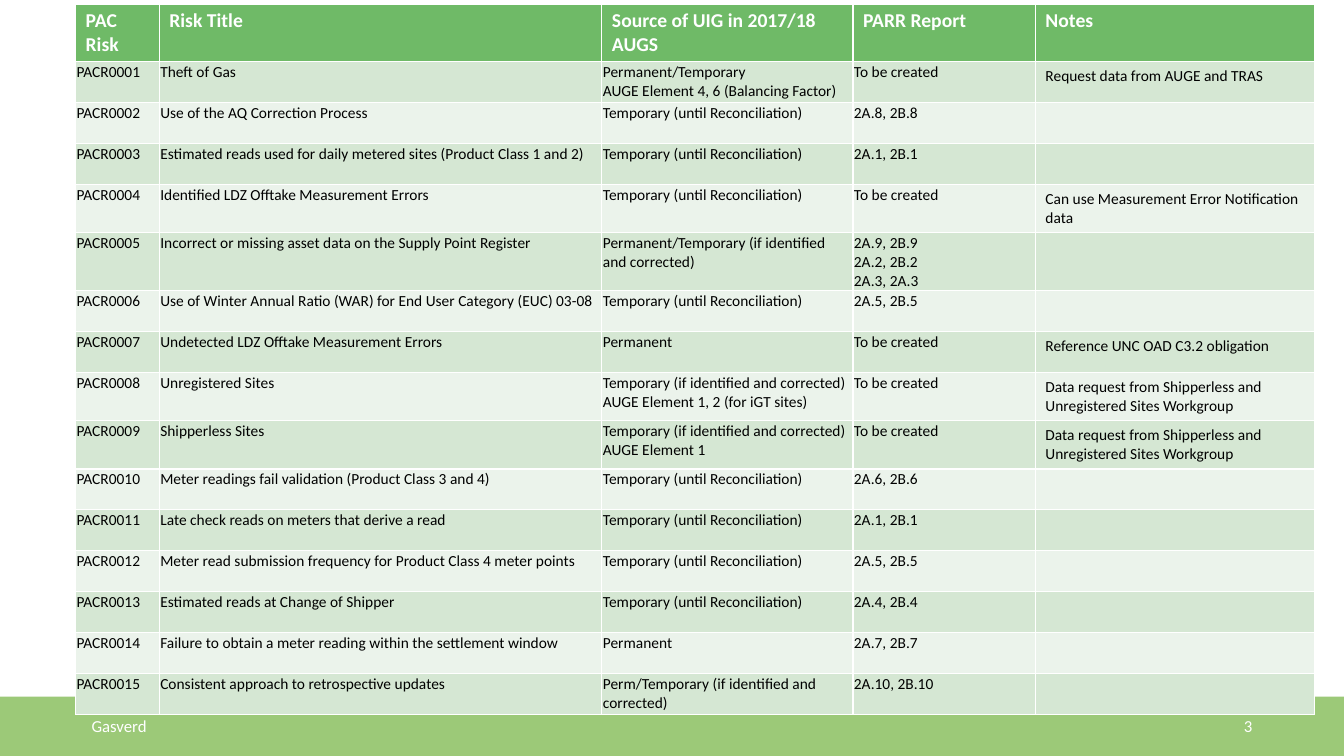
"""Build the slide that lists the PAC risks and their reports."""
from pptx import Presentation
from pptx.dml.color import RGBColor
from pptx.enum.shapes import MSO_SHAPE as Shape
from pptx.enum.text import MSO_ANCHOR as Anchor, PP_ALIGN as Align
from pptx.util import Inches, Pt

COLORS = {"band": "9CC978", "header": "6FBA67", "odd": "D5E7D3",
          "even": "EBF3EB", "white": "FFFFFF", "black": "000000"}
FONT = "Calibri"
SLIDE_WIDTH, SLIDE_HEIGHT = 13.33, 7.5
COLUMN_WIDTHS = (0.83, 4.39, 2.49, 1.81, 2.77)
HEADINGS = ("PAC Risk", "Risk Title", "Source of UIG in 2017/18 AUGS",
            "PARR Report", "Notes")
TEMPORARY = "Temporary (until Reconciliation)"
CORRECTED = "Temporary (if identified and corrected)"
PENDING = "To be created"
WORKGROUP = "Data request from Shipperless and Unregistered Sites Workgroup"
RISKS = (
    ("Theft of Gas",
     "Permanent/Temporary\nAUGE Element 4, 6 (Balancing Factor)",
     PENDING, "Request data from AUGE and TRAS"),
    ("Use of the AQ Correction Process", TEMPORARY, "2A.8, 2B.8", ""),
    ("Estimated reads used for daily metered sites (Product Class 1 and 2)",
     TEMPORARY, "2A.1, 2B.1", ""),
    ("Identified LDZ Offtake Measurement Errors", TEMPORARY, PENDING,
     "Can use Measurement Error Notification data"),
    ("Incorrect or missing asset data on the Supply Point Register",
     "Permanent/Temporary (if identified and corrected)",
     "2A.9, 2B.9\v2A.2, 2B.2\v2A.3, 2A.3", ""),
    ("Use of Winter Annual Ratio (WAR) for End User Category (EUC) 03-08",
     TEMPORARY, "2A.5, 2B.5", ""),
    ("Undetected LDZ Offtake Measurement Errors", "Permanent", PENDING,
     "Reference UNC OAD C3.2 obligation"),
    ("Unregistered Sites",
     f"{CORRECTED}\nAUGE Element 1, 2 (for iGT sites)", PENDING, WORKGROUP),
    ("Shipperless Sites", f"{CORRECTED}\nAUGE Element 1", PENDING, WORKGROUP),
    ("Meter readings fail validation (Product Class 3 and 4)",
     TEMPORARY, "2A.6, 2B.6", ""),
    ("Late check reads on meters that derive a read",
     TEMPORARY, "2A.1, 2B.1", ""),
    ("Meter read submission frequency for Product Class 4 meter points",
     TEMPORARY, "2A.5, 2B.5", ""),
    ("Estimated reads at Change of Shipper", TEMPORARY, "2A.4, 2B.4", ""),
    ("Failure to obtain a meter reading within the settlement window",
     "Permanent", "2A.7, 2B.7", ""),
    ("Consistent approach to retrospective updates",
     "Perm/Temporary (if identified and corrected)", "2A.10, 2B.10", ""),
)


def color(name):
    """Return the named colour."""
    return RGBColor.from_string(COLORS[name])


def style_text(frame, size, color_name, bold=False):
    """Set one font on every paragraph of a text frame."""
    for para in frame.paragraphs:
        para.font.name = FONT
        para.font.size = Pt(size)
        para.font.bold = bold
        para.font.color.rgb = color(color_name)


def fill_cell(cell, text, fill_name):
    """Write the text of a table cell and paint its background."""
    cell.text = text
    cell.fill.solid()
    cell.fill.fore_color.rgb = color(fill_name)


def add_risk_table(page, left, top, height):
    """Place the risk table, with equal rows that grow with their text."""
    rows = len(RISKS) + 1
    table = page.shapes.add_table(
        rows, len(HEADINGS), Inches(left), Inches(top),
        Inches(sum(COLUMN_WIDTHS)), Inches(height)).table
    for column, width in zip(table.columns, COLUMN_WIDTHS):
        column.width = Inches(width)
    for cell, heading in zip(table.rows[0].cells, HEADINGS):
        fill_cell(cell, heading, "header")
        style_text(cell.text_frame, 14, "white", bold=True)
    for number, risk in enumerate(RISKS, start=1):
        texts = (f"PACR{number:04}", *risk)
        fill_name = "odd" if number % 2 else "even"
        for column, text in enumerate(texts):
            cell = table.cell(number, column)
            fill_cell(cell, text, fill_name)
            style_text(cell.text_frame, 11, "black")
            if column < len(texts) - 1:
                cell.margin_left = cell.margin_right = Inches(0.01)
                cell.margin_top, cell.margin_bottom = Inches(0.01), 0


def add_footer_band(page, height):
    """Place the green band along the bottom of the slide."""
    band = page.shapes.add_shape(
        Shape.RECTANGLE, 0, Inches(SLIDE_HEIGHT - height),
        Inches(SLIDE_WIDTH), Inches(height))
    band.shadow.inherit = False
    band.fill.solid()
    band.fill.fore_color.rgb = color("band")
    band.line.fill.background()


def add_footer_text(page, text, left, width, align):
    """Place one text on the footer band."""
    box = page.shapes.add_textbox(
        Inches(left), Inches(7), Inches(width), Inches(0.4))
    frame = box.text_frame
    frame.word_wrap = True
    frame.vertical_anchor = Anchor.MIDDLE
    frame.text = text
    frame.paragraphs[0].alignment = align
    style_text(frame, 12, "white")


def main():
    """Build and save the deck."""
    deck = Presentation()
    deck.slide_width = Inches(SLIDE_WIDTH)
    deck.slide_height = Inches(SLIDE_HEIGHT)
    page = deck.slides.add_slide(deck.slide_layouts[6])
    add_footer_band(page, 0.59)
    add_risk_table(page, left=0.75, top=0.04, height=6.5)
    add_footer_text(page, "Gasverd", 0.81, 4.5, Align.LEFT)
    add_footer_text(page, "3", 9.52, 3, Align.RIGHT)
    deck.save("out.pptx")


if __name__ == "__main__":
    main()
